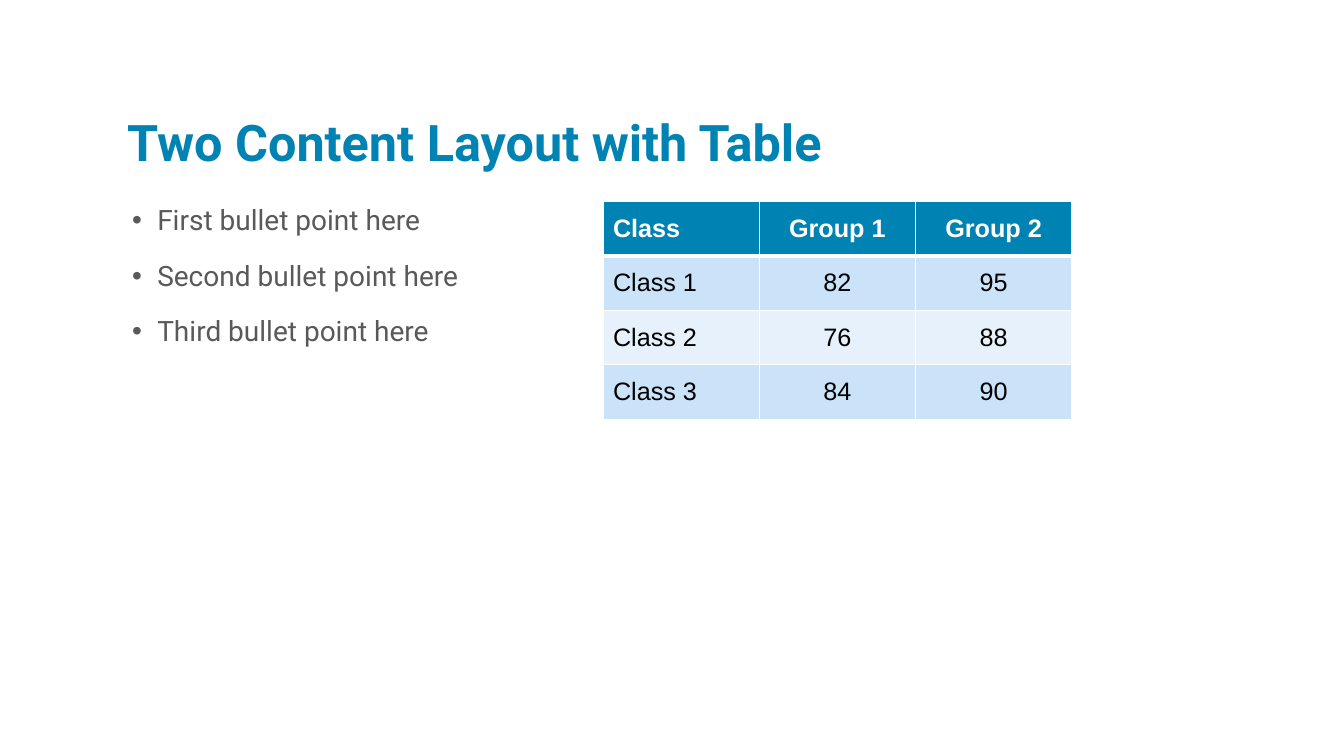
from lxml import etree
from pptx import Presentation
from pptx.dml.color import RGBColor
from pptx.enum.text import MSO_ANCHOR, MSO_AUTO_SIZE, PP_ALIGN
from pptx.oxml.ns import qn
from pptx.util import Inches, Pt

LEFT, CENTER = PP_ALIGN.LEFT, PP_ALIGN.CENTER
TOP, MIDDLE, BOTTOM = MSO_ANCHOR.TOP, MSO_ANCHOR.MIDDLE, MSO_ANCHOR.BOTTOM
NO_FIT = MSO_AUTO_SIZE.NONE

BLUE = RGBColor(0x00, 0x82, 0xB3)
GRAY = RGBColor(0x59, 0x59, 0x59)
WHITE = RGBColor(0xFF, 0xFF, 0xFF)
BLACK = RGBColor(0x00, 0x00, 0x00)
BANDS = [RGBColor(0xCA, 0xE3, 0xF9), RGBColor(0xE6, 0xF1, 0xFC)]

TITLE = "Two Content Layout with Table"
POINTS = ["First bullet point here", "Second bullet point here",
          "Third bullet point here"]
SCORES = [["Class", "Group 1", "Group 2"],
          ["Class 1", "82", "95"],
          ["Class 2", "76", "88"],
          ["Class 3", "84", "90"]]


def add_run(para, text, font, size, color, bold=False):
    run = para.add_run()
    run.text = text
    run.font.name = font
    run.font.size = Pt(size)
    run.font.color.rgb = color
    run.font.bold = bold


def place(holder, box, anchor):
    """Move a placeholder to its box and return its text frame."""
    holder.left, holder.top, holder.width, holder.height = map(Inches, box)
    frame = holder.text_frame
    frame.word_wrap = True
    frame.auto_size = NO_FIT
    frame.vertical_anchor = anchor
    return frame


def add_bullet(para):
    props = para._p.get_or_add_pPr()
    props.set("marL", str(Inches(0.3)))
    props.set("indent", str(Inches(-0.25)))
    color = etree.SubElement(props, qn("a:buClr"))
    etree.SubElement(color, qn("a:srgbClr"), val=str(GRAY))
    etree.SubElement(props, qn("a:buFont"), typeface="Arial")
    etree.SubElement(props, qn("a:buChar"), char="•")


def add_border(cell, side, width):
    props = cell._tc.get_or_add_tcPr()
    line = etree.SubElement(props, qn("a:ln" + side), w=str(Pt(width)))
    fill = etree.SubElement(line, qn("a:solidFill"))
    etree.SubElement(fill, qn("a:srgbClr"), val=str(WHITE))


def fill_title(slide, box):
    para = place(slide.shapes.title, box, BOTTOM).paragraphs[0]
    para.alignment = LEFT
    para.line_spacing = 0.8
    add_run(para, TITLE, "Roboto", 36, BLUE, True)


def fill_list(slide, box):
    frame = place(slide.placeholders[1], box, TOP)
    for i, point in enumerate(POINTS):
        para = frame.add_paragraph() if i else frame.paragraphs[0]
        add_bullet(para)
        para.line_spacing = 0.9
        para.space_before = Pt(18 if i else 0)
        add_run(para, point, "Roboto", 20, GRAY)


def add_scores(slide, box):
    left, top, width, height = map(Inches, box)
    table = slide.shapes.add_table(len(SCORES), len(SCORES[0]),
                                   left, top, width, height).table
    for r, row in enumerate(SCORES):
        head = r == 0
        for c, text in enumerate(row):
            cell = table.cell(r, c)
            # Thick rule under the header row, thin rules elsewhere
            for side in "LRTB":
                thick = (r, side) in [(0, "B"), (1, "T")]
                add_border(cell, side, 3 if thick else 1)
            cell.fill.solid()
            cell.fill.fore_color.rgb = BLUE if head else BANDS[(r - 1) % 2]
            cell.vertical_anchor = MIDDLE
            para = cell.text_frame.paragraphs[0]
            para.alignment = CENTER if c else LEFT
            add_run(para, text, "Arial", 18, WHITE if head else BLACK, head)


def main():
    deck = Presentation()
    deck.slide_width, deck.slide_height = Inches(13.33), Inches(7.5)
    slide = deck.slides.add_slide(deck.slide_layouts[1])
    # Title above, bullets on the left, table on the right
    fill_title(slide, (1.16, 0.58, 9.5, 1.17))
    fill_list(slide, (1.16, 2, 4.65, 4.58))
    add_scores(slide, (5.98, 2, 4.65, 2.16))
    deck.save("out.pptx")


if __name__ == "__main__":
    main()
